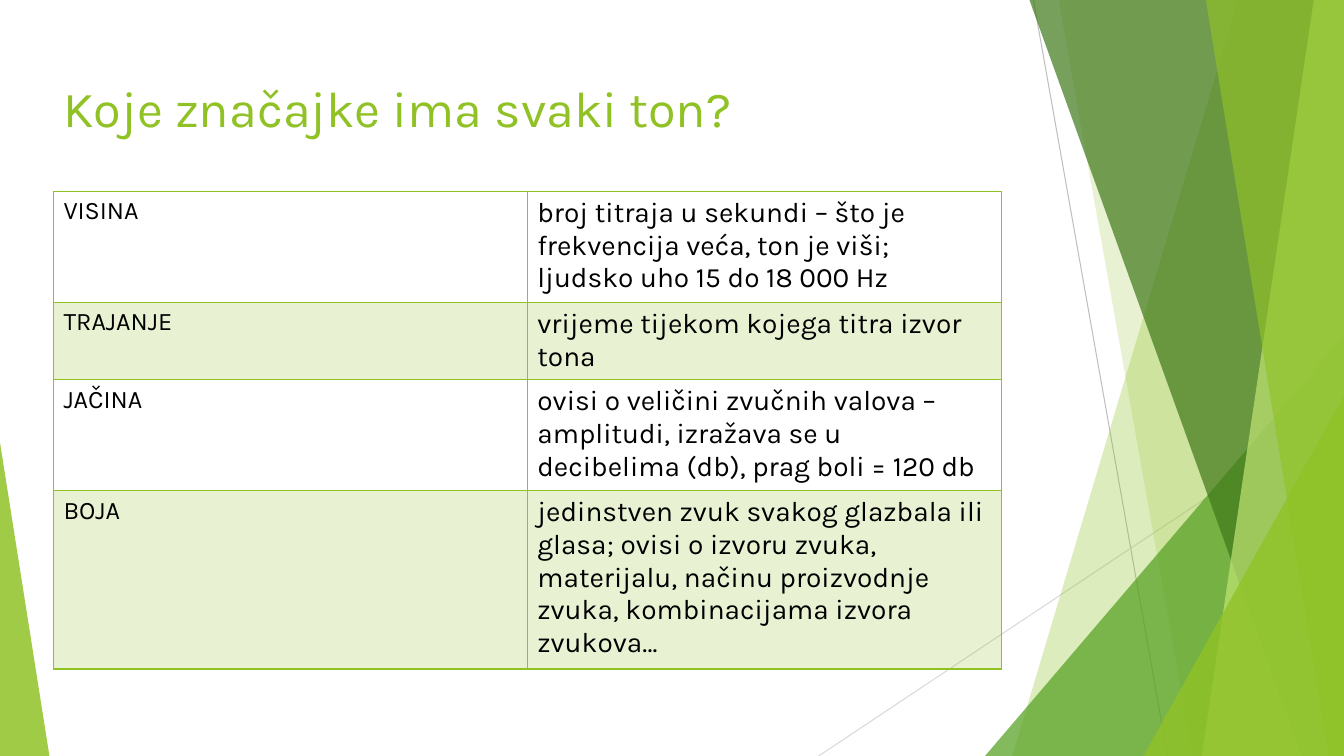
from dataclasses import dataclass

import pptx
import pptx.dml.color
import pptx.enum.shapes
import pptx.enum.text
import pptx.oxml
import pptx.oxml.ns
import pptx.util
from lxml import etree

Inches = pptx.util.Inches
Pt = pptx.util.Pt
qn = pptx.oxml.ns.qn

WIDE, HIGH = 13.33, 7.5
LEFT, SPAN = 0.53, 9.4
GREEN = "90C226"
FONT = "Karla"


@dataclass
class Line:
    start: tuple[float, float]
    end: tuple[float, float]
    color: str


@dataclass
class Band:
    """A strip from its slanted left edge to the right side of the slide."""
    top: float
    foot: float
    color: str
    alpha: int


@dataclass
class Wedge:
    """A right triangle standing on the bottom of the slide."""
    left: float
    top: float
    width: float
    peak: float
    color: str
    alpha: int


@dataclass
class Trait:
    name: str
    text: str
    height: float


LINES = [
    Line((10.25, 0), (11.58, HIGH), "BFBFBF"),
    Line((WIDE, 4.03), (8.12, HIGH), "D9D9D9"),
]
FACETS = [
    Band(12.28, 10.04, GREEN, 30),
    Band(10.5, 11.83, GREEN, 20),
    Wedge(9.77, 3.33, 3.56, 1, "54A021", 72),
    Band(10.21, 12.91, "3F7819", 70),
    Band(13.03, 11.92, "C0E474", 70),
    Band(11.96, 13.18, GREEN, 65),
    Wedge(11.34, 3.93, 1.99, 1, GREEN, 80),
    Wedge(0, 4.39, 0.49, 0, GREEN, 85),
]
TRAITS = [
    Trait("VISINA", "broj titraja u sekundi – što je frekvencija veća, ton je viši; "
          "ljudsko uho 15 do 18 000 Hz", 1.08),
    Trait("TRAJANJE", "vrijeme tijekom kojega titra izvor tona", 0.75),
    Trait("JAČINA", "ovisi o veličini zvučnih valova – amplitudi, izražava se u "
          "decibelima (db), prag boli = 120 db", 1.08),
    Trait("BOJA", "jedinstven zvuk svakog glazbala ili glasa; ovisi o izvoru zvuka, "
          "materijalu, načinu proizvodnje zvuka, kombinacijama izvora zvukova…", 1.73),
]


def rgb(color: str) -> pptx.dml.color.RGBColor:
    return pptx.dml.color.RGBColor.from_string(color)


def tint(fill, owner, color: str, alpha: int) -> None:
    """Fill with a see-through colour; owner is the XML that holds the fill."""
    fill.solid()
    fill.fore_color.rgb = rgb(color)
    tone = owner.find(qn("a:solidFill")).find(qn("a:srgbClr"))
    etree.SubElement(tone, qn("a:alpha")).set("val", str(alpha * 1000))


def write(frame, text: str, size: int, color: str) -> None:
    para = frame.paragraphs[0]
    para.text = text
    para.font.name = FONT
    para.font.size = Pt(size)
    para.font.color.rgb = rgb(color)


def draw_line(shapes, line: Line) -> None:
    ends = [Inches(n) for n in line.start + line.end]
    wire = shapes.add_connector(pptx.enum.shapes.MSO_CONNECTOR.STRAIGHT, *ends)
    wire.line.color.rgb = rgb(line.color)
    wire.line.width = Pt(0.75)
    etree.SubElement(wire.element.spPr, qn("a:effectLst"))


def draw_facet(shapes, facet: Band | Wedge) -> None:
    if isinstance(facet, Band):
        pen = shapes.build_freeform(Inches(facet.top), 0)
        rest = [(WIDE, 0), (WIDE, HIGH), (facet.foot, HIGH)]
        pen.add_line_segments([(Inches(x), Inches(y)) for x, y in rest])
        shape = pen.convert_to_shape()
    else:
        shape = shapes.add_shape(
            pptx.enum.shapes.MSO_SHAPE.ISOSCELES_TRIANGLE,
            Inches(facet.left), Inches(facet.top),
            Inches(facet.width), Inches(HIGH - facet.top))
        shape.adjustments[0] = facet.peak
    shape.shadow.inherit = False
    shape.line.fill.background()
    tint(shape.fill, shape.element.spPr, facet.color, facet.alpha)


def draw_title(shapes, text: str) -> None:
    box = shapes.add_textbox(Inches(LEFT), Inches(0.69), Inches(SPAN), Inches(0.76))
    box.text_frame.word_wrap = True
    box.text_frame.vertical_anchor = pptx.enum.text.MSO_ANCHOR.MIDDLE
    write(box.text_frame, text, 36, GREEN)


def frame_cell(cell) -> None:
    """Give a cell a border on all four sides."""
    props = cell._tc.get_or_add_tcPr()
    for spot, side in enumerate(("lnL", "lnR", "lnT", "lnB")):
        edge = etree.Element(qn("a:" + side), w=str(Pt(1)))
        paint = etree.SubElement(edge, qn("a:solidFill"))
        etree.SubElement(paint, qn("a:srgbClr"), val=GREEN)
        props.insert(spot, edge)


def draw_table(shapes, traits: list[Trait]) -> None:
    total = sum(trait.height for trait in traits)
    table = shapes.add_table(len(traits), 2, Inches(LEFT), Inches(1.9),
                             Inches(SPAN), Inches(total)).table
    table.first_row = table.horz_banding = False
    for row, trait in enumerate(traits):
        table.rows[row].height = Inches(trait.height)
        for col, (text, size) in enumerate([(trait.name, 18), (trait.text, 20)]):
            cell = table.cell(row, col)
            write(cell.text_frame, text, size, "000000")
            if row % 2:
                tint(cell.fill, cell._tc.tcPr, GREEN, 20)
            else:
                cell.fill.background()
            frame_cell(cell)


def main() -> None:
    deck = pptx.Presentation()
    deck.slide_width, deck.slide_height = Inches(WIDE), Inches(HIGH)
    shapes = deck.slides.add_slide(deck.slide_layouts[6]).shapes
    for line in LINES:
        draw_line(shapes, line)
    for facet in FACETS:
        draw_facet(shapes, facet)
    draw_title(shapes, "Koje značajke ima svaki ton?")
    draw_table(shapes, TRAITS)
    deck.save("out.pptx")


if __name__ == "__main__":
    main()
